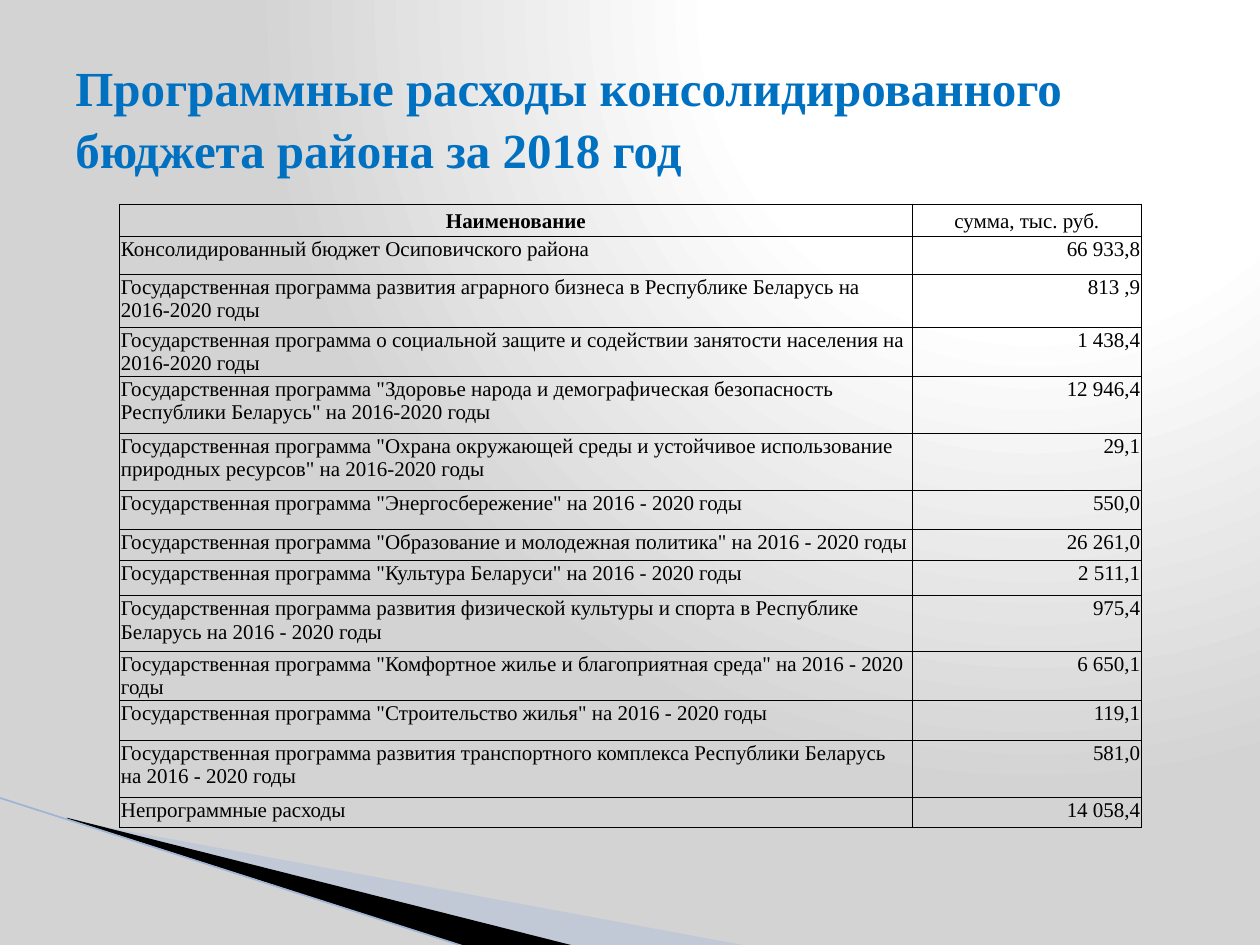
from typing import NamedTuple

from lxml import etree
from pptx import Presentation
from pptx.dml.color import RGBColor
from pptx.enum.shapes import MSO_CONNECTOR
from pptx.enum.text import MSO_ANCHOR, PP_ALIGN
from pptx.oxml import parse_xml
from pptx.oxml.ns import nsdecls, qn
from pptx.util import Inches, Pt

LEFT, CENTER, RIGHT = PP_ALIGN.LEFT, PP_ALIGN.CENTER, PP_ALIGN.RIGHT
TOP, MIDDLE = MSO_ANCHOR.TOP, MSO_ANCHOR.MIDDLE
STRAIGHT = MSO_CONNECTOR.STRAIGHT

FONT = "Times New Roman"
BLACK = RGBColor(0x00, 0x00, 0x00)
TITLE_BLUE = RGBColor(0x00, 0x70, 0xC0)
WEDGE_BLUE = RGBColor(0xA7, 0xB9, 0xDB)
EDGE_BLUE = RGBColor(0x9E, 0xB3, 0xD6)
WHITE = RGBColor(0xFF, 0xFF, 0xFF)
GRAY = RGBColor(0xD3, 0xD3, 0xD3)
BACKGROUND_STOPS = ((0, WHITE), (40, WHITE), (100, GRAY))


class Expense(NamedTuple):
    name: str
    amount: str
    height: float


class Wedge(NamedTuple):
    points: tuple
    color: RGBColor
    opacity: int


HEADER = Expense("Наименование", "сумма, тыс. руб.", 0.26)
EXPENSES = (
    Expense("Консолидированный бюджет Осиповичского района", "66 933,8", 0.3),
    Expense("Государственная программа развития аграрного бизнеса в Республике Беларусь на 2016-2020 годы", "813 ,9", 0.42),
    Expense("Государственная программа о социальной защите и содействии занятости населения на 2016-2020 годы", "1 438,4", 0.39),
    Expense('Государственная программа "Здоровье народа и демографическая безопасность Республики Беларусь" на 2016-2020 годы', "12 946,4", 0.45),
    Expense('Государственная программа "Охрана окружающей среды и устойчивое использование природных ресурсов" на 2016-2020 годы', "29,1", 0.45),
    Expense('Государственная программа "Энергосбережение" на 2016 - 2020 годы', "550,0", 0.31),
    Expense('Государственная программа "Образование и молодежная политика" на 2016 - 2020 годы', "26 261,0", 0.25),
    Expense('Государственная программа "Культура Беларуси" на 2016 - 2020 годы', "2 511,1", 0.28),
    Expense("Государственная программа развития физической культуры и спорта в Республике Беларусь на 2016 - 2020 годы", "975,4", 0.44),
    Expense('Государственная программа "Комфортное жилье и благоприятная среда" на 2016 - 2020 годы', "6 650,1", 0.39),
    Expense('Государственная программа "Строительство жилья" на 2016 - 2020 годы', "119,1", 0.32),
    Expense("Государственная программа развития транспортного комплекса Республики Беларусь на 2016 - 2020 годы", "581,0", 0.45),
    Expense("Непрограммные расходы", "14 058,4", 0.24),
)
COLUMN_WIDTHS = (6.29, 1.82)

WEDGES = (
    Wedge(((0.55, 6.51), (5.95, 7.51), (4.56, 7.51), (0.55, 6.5)), WEDGE_BLUE, 40),
    Wedge(((0.53, 6.49), (4.57, 7.51), (3.72, 7.52), (0.54, 6.5)), BLACK, 100),
)


def paint_background(page) -> None:
    """Fill the page with a radial gradient centred near its top right."""
    page.background.fill.gradient()
    gradient = page._element.find(".//" + qn("a:gradFill"))
    for child in list(gradient):
        gradient.remove(child)
    stops = "".join(
        f'<a:gs pos="{position * 1000}"><a:srgbClr val="{color}"/></a:gs>'
        for position, color in BACKGROUND_STOPS
    )
    gradient.append(parse_xml(f'<a:gsLst {nsdecls("a")}>{stops}</a:gsLst>'))
    gradient.append(parse_xml(
        f'<a:path {nsdecls("a")} path="circle">'
        '<a:fillToRect l="65000" b="98000"/></a:path>'
    ))


def draw_wedge(page, wedge: Wedge) -> None:
    start, *others = [(Inches(x), Inches(y)) for x, y in wedge.points]
    builder = page.shapes.build_freeform(*start)
    builder.add_line_segments(others, close=True)
    shape = builder.convert_to_shape()
    shape.shadow.inherit = False
    shape.line.fill.background()
    shape.fill.solid()
    shape.fill.fore_color.rgb = wedge.color
    if wedge.opacity < 100:
        color = shape._element.spPr.find(".//" + qn("a:srgbClr"))
        etree.SubElement(color, qn("a:alpha"), val=str(wedge.opacity * 1000))


def draw_edge(page) -> None:
    edge = page.shapes.add_connector(
        STRAIGHT, Inches(-0.01), Inches(6.33), Inches(3.71), Inches(7.52))
    edge.line.color.rgb = EDGE_BLUE
    edge.line.width = Pt(0.95)
    etree.SubElement(edge._element.spPr, qn("a:effectLst"))


def write(frame, text: str, *, size: float, color: RGBColor = BLACK,
          bold: bool = False, align=LEFT, spacing: float = 1.0) -> None:
    para = frame.paragraphs[0]
    para.alignment = align
    para.line_spacing = spacing
    span = para.add_run()
    span.text = text
    span.font.name = FONT
    span.font.size = Pt(size)
    span.font.bold = bold
    span.font.color.rgb = color


def format_cell(cell, anchor) -> None:
    """Set thin insets, black borders and no fill."""
    cell.vertical_anchor = anchor
    cell.margin_left = cell.margin_top = cell.margin_right = Inches(0.01)
    cell.margin_bottom = 0
    properties = cell._tc.get_or_add_tcPr()
    for side in ("lnL", "lnR", "lnT", "lnB"):
        properties.append(parse_xml(
            f'<a:{side} {nsdecls("a")} w="{Pt(0.5)}"><a:solidFill>'
            f'<a:srgbClr val="{BLACK}"/></a:solidFill></a:{side}>'
        ))
    cell.fill.background()


def draw_table(page) -> None:
    rows = (HEADER, *EXPENSES)
    table = page.shapes.add_table(
        len(rows), len(COLUMN_WIDTHS), Inches(0.95), Inches(1.62),
        Inches(sum(COLUMN_WIDTHS)), Inches(sum(row.height for row in rows)),
    ).table
    table.first_row = table.horz_banding = False
    for column, width in zip(table.columns, COLUMN_WIDTHS):
        column.width = Inches(width)
    for index, expense in enumerate(rows):
        is_header = expense is HEADER
        table.rows[index].height = Inches(expense.height)
        for column, text in enumerate((expense.name, expense.amount)):
            cell = table.cell(index, column)
            format_cell(cell, MIDDLE if is_header else TOP)
            align = CENTER if is_header else (LEFT, RIGHT)[column]
            write(cell.text_frame, text, size=12, align=align,
                  bold=is_header and column == 0)


def draw_title(page) -> None:
    box = page.shapes.add_textbox(
        Inches(0.5), Inches(0.3), Inches(9), Inches(1.25))
    box.text_frame.word_wrap = True
    box.text_frame.vertical_anchor = MIDDLE
    write(box.text_frame,
          "Программные расходы консолидированного бюджета района за 2018 год",
          size=28, color=TITLE_BLUE, bold=True, spacing=1.05)


def main() -> None:
    deck = Presentation()
    deck.slide_width, deck.slide_height = Inches(10), Inches(7.5)
    page = deck.slides.add_slide(deck.slide_layouts[6])
    paint_background(page)
    for wedge in WEDGES:
        draw_wedge(page, wedge)
    draw_edge(page)
    draw_table(page)
    draw_title(page)
    deck.save("out.pptx")


if __name__ == "__main__":
    main()
